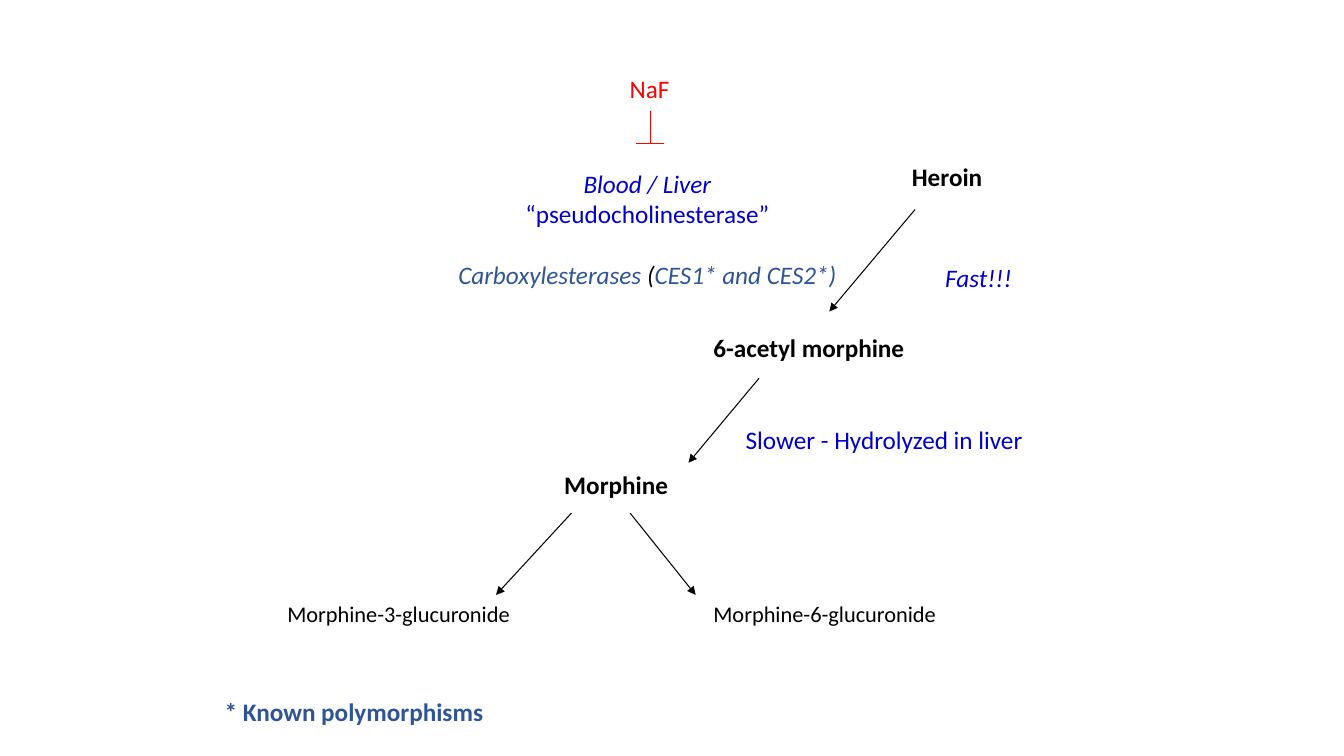
from lxml.etree import SubElement
from pptx import Presentation
from pptx.dml.color import RGBColor
from pptx.enum.shapes import MSO_CONNECTOR
from pptx.enum.text import MSO_AUTO_SIZE, PP_ALIGN
from pptx.oxml.ns import qn
from pptx.util import Cm, Pt

BLACK = RGBColor(0x00, 0x00, 0x00)
RED = RGBColor(0xFF, 0x00, 0x00)
BLUE = RGBColor(0x00, 0x00, 0xCC)
STEEL = RGBColor(0x2F, 0x55, 0x97)

COMPOUND = {"bold": True}
METABOLITE = {"size": Pt(16)}
INHIBITOR = {"color": RED}
NOTE = {"color": BLUE}
NOTE_ITALIC = {"color": BLUE, "italic": True}
GENE = {"color": STEEL, "italic": True}
FOOTNOTE = {"color": STEEL, "bold": True}

# text, format, left, top, width in cm
LABELS = [
    ("Heroin", COMPOUND, 22.73, 3.94, 2.31),
    ("6-acetyl morphine", COMPOUND, 17.73, 8.26, 5.36),
    ("Morphine", COMPOUND, 13.97, 11.71, 3.15),
    ("Morphine-3-glucuronide", METABOLITE, 6.99, 14.99, 6.2),
    ("Morphine-6-glucuronide", METABOLITE, 17.73, 14.99, 6.2),
    ("NaF", INHIBITOR, 15.62, 1.73, 1.52),
    ("Fast!!!", NOTE_ITALIC, 23.57, 6.48, 2.21),
    ("Slower - Hydrolyzed in liver", NOTE, 18.54, 10.57, 8.33),
    ("* Known polymorphisms", FOOTNOTE, 5.41, 17.42, 7.24),
]
ENZYMES = [
    [("Blood / Liver", NOTE_ITALIC)],
    [("“pseudocholinesterase”", NOTE)],
    [("Carboxylesterases", GENE), (" (", {"italic": True}),
     ("CES1* and CES2*)", GENE)],
]
ENZYME_BOX = (11.25, 4.11, 10.13, 3.33)

# start x, start y, end x, end y in cm
REACTIONS = [
    (23.06, 5.28, 20.9, 7.85),
    (19.13, 9.53, 17.35, 11.66),
    (14.4, 12.93, 12.5, 14.99),
    (15.88, 12.93, 17.53, 14.99),
]
INHIBITION = [
    (16.38, 2.79, 16.38, 3.61),
    (16.03, 3.61, 16.74, 3.61),
]


def add_run(p, text, fmt):
    r = p.add_run()
    r.text = text
    values = {"name": "Calibri", "size": Pt(18), "color": BLACK, **fmt}
    r.font.color.rgb = values.pop("color")
    for name, value in values.items():
        setattr(r.font, name, value)


def add_text(slide, paragraphs, box, align=PP_ALIGN.LEFT):
    """Add an unwrapped text box and return its paragraphs."""
    tf = slide.shapes.add_textbox(*map(Cm, box)).text_frame
    tf.word_wrap = False
    tf.auto_size = MSO_AUTO_SIZE.SHAPE_TO_FIT_TEXT
    for i, runs in enumerate(paragraphs):
        p = tf.add_paragraph() if i else tf.paragraphs[0]
        p.alignment = align
        for text, fmt in runs:
            add_run(p, text, fmt)
    return tf.paragraphs


def add_line(slide, ends, color, width, arrow=False):
    line = slide.shapes.add_connector(MSO_CONNECTOR.STRAIGHT, *map(Cm, ends))
    line.line.color.rgb = color
    line.line.width = Pt(width)
    if arrow:
        SubElement(line.line._get_or_add_ln(), qn("a:tailEnd"), type="triangle")
    SubElement(line._element.spPr, qn("a:effectLst"))


def main():
    prs = Presentation()
    prs.slide_width, prs.slide_height = Cm(33.87), Cm(19.05)
    slide = prs.slides.add_slide(prs.slide_layouts[6])

    for text, fmt, left, top, width in LABELS:
        height = 0.94 if fmt is METABOLITE else 1.02
        add_text(slide, [[(text, fmt)]], (left, top, width, height))
    enzymes = add_text(slide, ENZYMES, ENZYME_BOX, PP_ALIGN.CENTER)
    enzymes[-1].space_before = Pt(22)

    for ends in REACTIONS:
        add_line(slide, ends, BLACK, 0.75, arrow=True)
    for ends in INHIBITION:
        add_line(slide, ends, RED, 0.5)

    prs.save("out.pptx")


if __name__ == "__main__":
    main()
